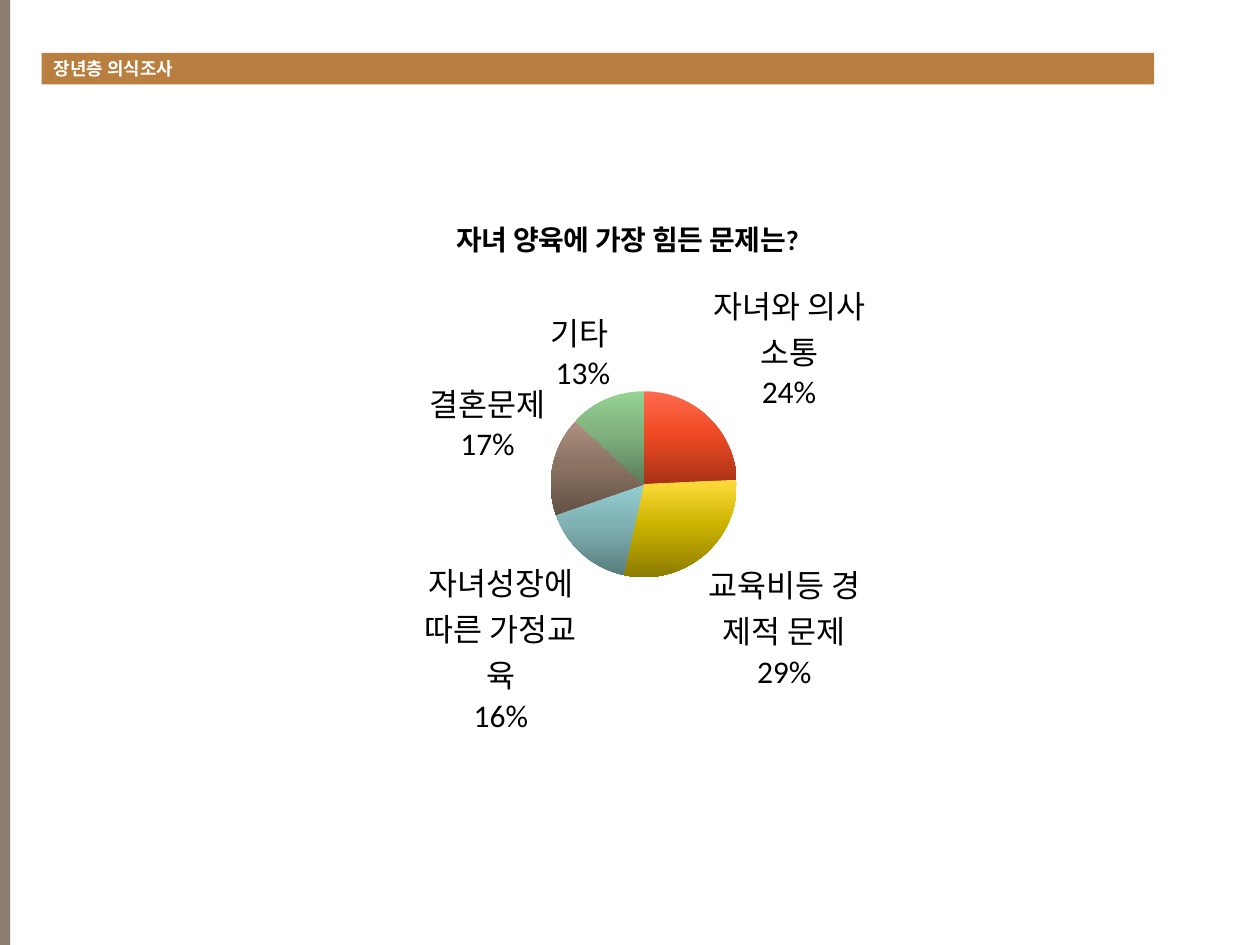
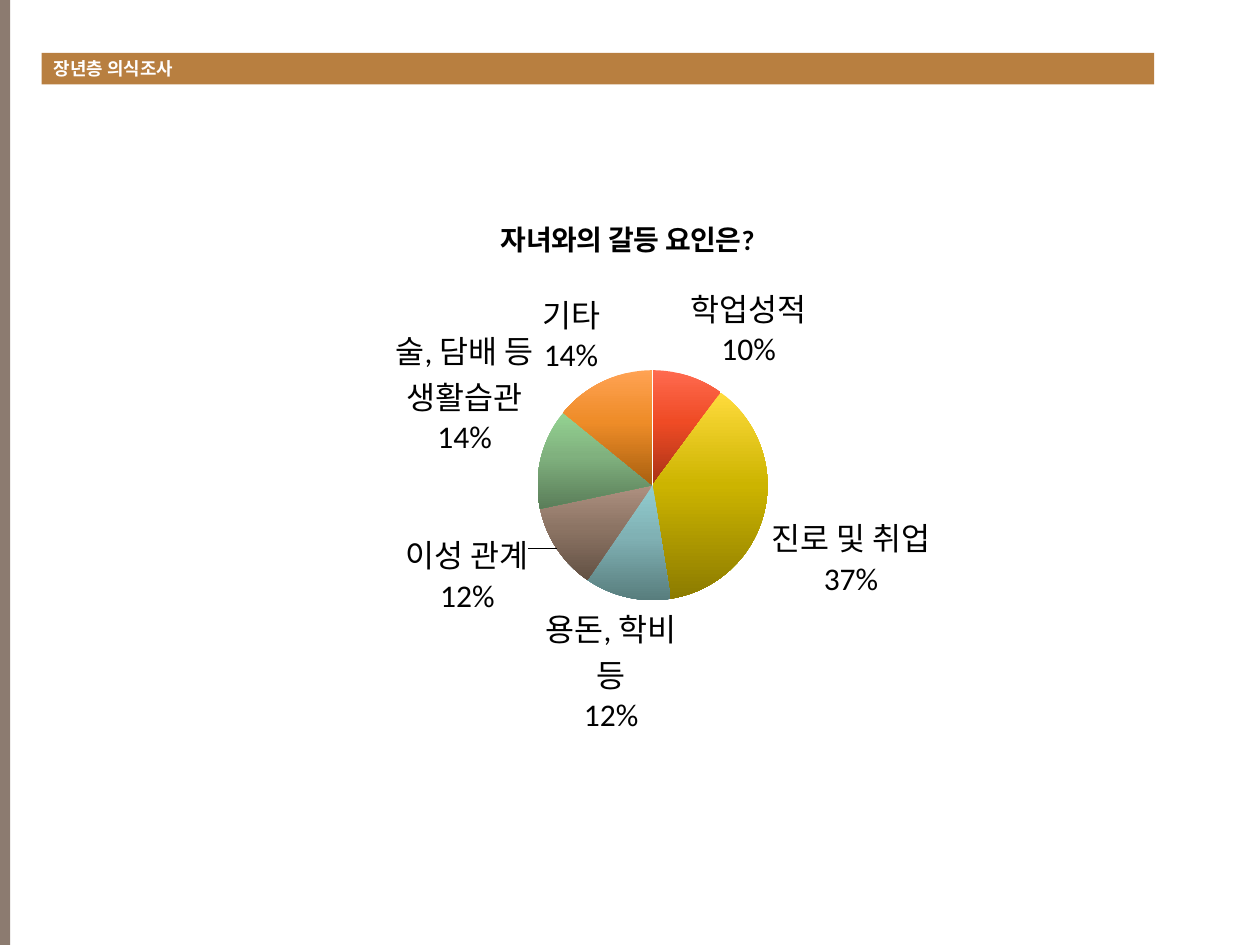
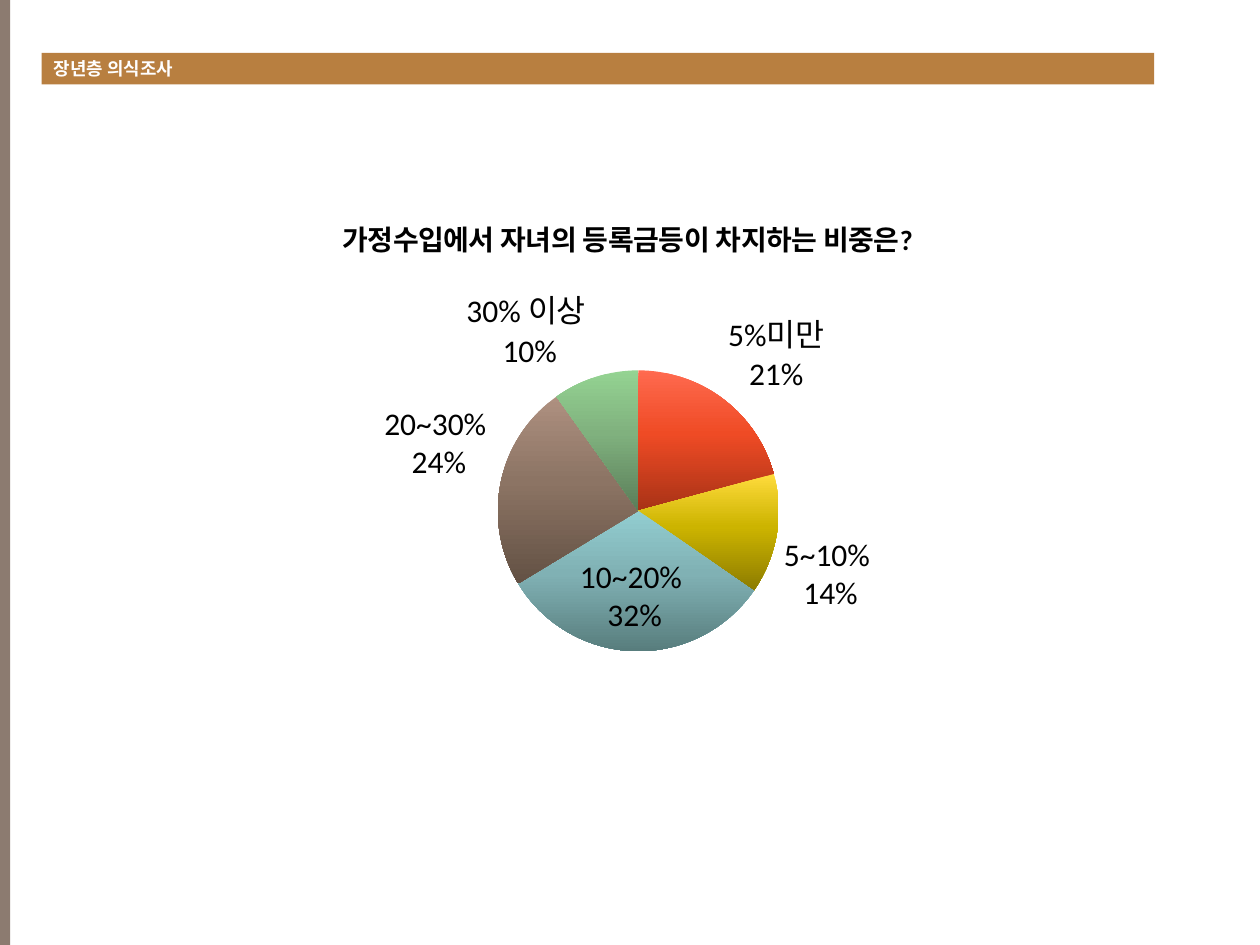
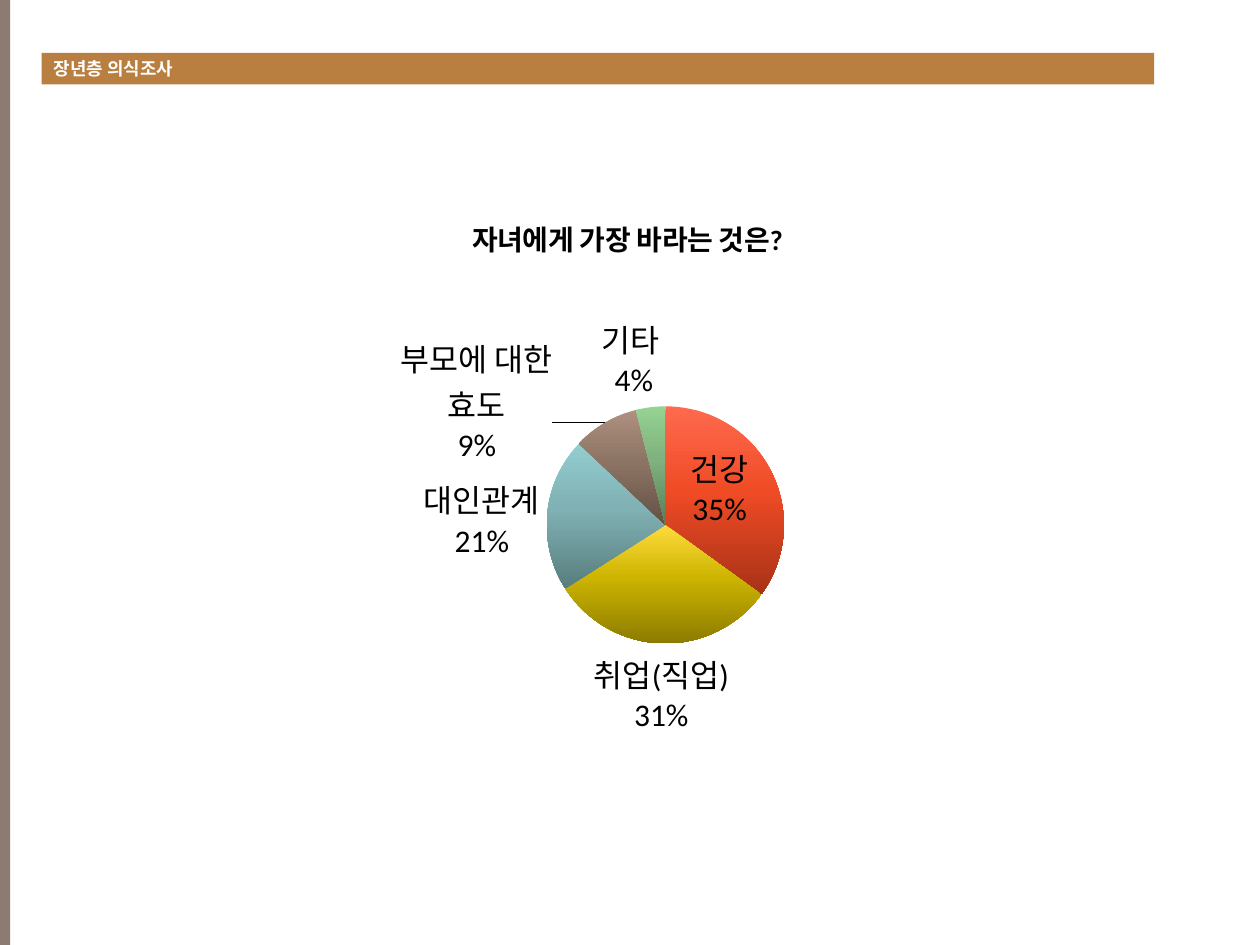
"""Builds four survey slides, each with a header band and a pie chart."""
from copy import deepcopy

from lxml.etree import Element
from pptx import Presentation
from pptx.chart.data import CategoryChartData
from pptx.dml.color import RGBColor
from pptx.enum.chart import XL_CHART_TYPE, XL_LABEL_POSITION
from pptx.enum.shapes import MSO_SHAPE
from pptx.enum.text import MSO_ANCHOR, PP_ALIGN
from pptx.oxml.ns import qn
from pptx.util import Inches, Pt

FONT = "Calibri"
COLORS = {"stripe": "8C7B70", "band": "B87F40", "white": "FFFFFF", "black": "000000"}
SLICES = {
    "red": ("FF6A4F", "EF4B25", "A83216"),
    "yellow": ("FFDB3C", "CCB400", "8C7B00"),
    "teal": ("92CDD0", "80B1B4", "587D7D"),
    "brown": ("AE9080", "8C7464", "635144"),
    "green": ("94D392", "80B17E", "5A7D59"),
    "orange": ("FFA253", "EE8C28", "A9600F"),
}
SURVEYS = [
    ("자녀 양육에 가장 힘든 문제는? ", {
        "자녀와 의사소통": 24, "교육비등 경제적 문제": 29,
        "자녀성장에 따른 가정교육": 16, "결혼문제": 17, "기타 ": 13}),
    ("자녀와의 갈등 요인은? ", {
        "학업성적": 10, "진로 및 취업": 37, "용돈, 학비 등": 12,
        "이성 관계": 12, "술, 담배 등 생활습관": 14, "기타": 14}),
    ("가정수입에서 자녀의 등록금등이 차지하는 비중은? ", {
        "5%미만": 21, "5~10% ": 14, "10~20% ": 32, "20~30% ": 24, "30% 이상 ": 10}),
    ("자녀에게 가장 바라는 것은? ", {
        "건강": 35, "취업(직업)": 31, "대인관계": 21, "부모에 대한 효도": 9, "기타 ": 4}),
]


def write(frame, text, size, color, bold=False):
    paragraph = frame.paragraphs[0]
    span = paragraph.add_run()
    span.text = text
    span.font.name = FONT
    span.font.size = Pt(size)
    span.font.bold = bold
    span.font.color.rgb = RGBColor.from_string(COLORS[color])
    return paragraph


def add_bar(page, left, top, width, height, color):
    bar = page.shapes.add_shape(
        MSO_SHAPE.RECTANGLE, Inches(left), Inches(top), Inches(width), Inches(height))
    bar.shadow.inherit = False
    bar.fill.solid()
    bar.fill.fore_color.rgb = RGBColor.from_string(COLORS[color])
    bar.line.fill.background()
    return bar


deck = Presentation()
deck.slide_width, deck.slide_height = Inches(10), Inches(7.5)

for question, answers in SURVEYS:
    page = deck.slides.add_slide(deck.slide_layouts[6])
    add_bar(page, 0, 0, 0.08, 7.5, "stripe")
    band = add_bar(page, 0.33, 0.42, 8.83, 0.25, "band")
    band.text_frame.margin_top = band.text_frame.margin_bottom = 0
    band.text_frame.vertical_anchor = MSO_ANCHOR.MIDDLE
    heading = write(band.text_frame, "장년층 의식조사", 10.2, "white", bold=True)
    heading.alignment = PP_ALIGN.LEFT

    data = CategoryChartData()
    data.categories = list(answers)
    data.add_series(question, list(answers.values()))
    chart = page.shapes.add_chart(
        XL_CHART_TYPE.PIE, Inches(1.67), Inches(1.53), Inches(6.67), Inches(4.44), data).chart
    chart.has_legend = False
    chart.font.name = FONT
    chart.font.size = Pt(18)
    chart.font.color.rgb = RGBColor.from_string(COLORS["black"])
    chart.has_title = True
    chart.chart_title.include_in_layout = False
    write(chart.chart_title.text_frame, question, 16, "black", bold=True)

    plot = chart.plots[0]
    plot.vary_by_categories = True
    series = plot.series[0]
    for index, shades in enumerate(list(SLICES.values())[:len(answers)]):
        fill = series.points[index].format.fill
        fill.gradient()
        fill.gradient_angle = 270
    for stop_list in chart.element.iter(qn("a:gsLst")):
        stop_list.insert(1, deepcopy(stop_list[0]))
    for index, shades in enumerate(list(SLICES.values())[:len(answers)]):
        stops = series.points[index].format.fill.gradient_stops
        for stop, shade, position in zip(stops, shades, (0, 0.45, 1)):
            stop.color.rgb = RGBColor.from_string(shade)
            stop.position = position

    labels = series.data_labels
    labels.show_value = False
    labels.show_category_name = True
    labels.show_percentage = True
    labels.number_format = "0%"
    labels.number_format_is_linked = False
    labels.position = XL_LABEL_POSITION.BEST_FIT
    for bubble_flag in list(chart.element.iter(qn("c:showBubbleSize"))):
        separator = Element(qn("c:separator"))
        separator.text = "\n"
        bubble_flag.addnext(separator)

deck.save("out.pptx")
